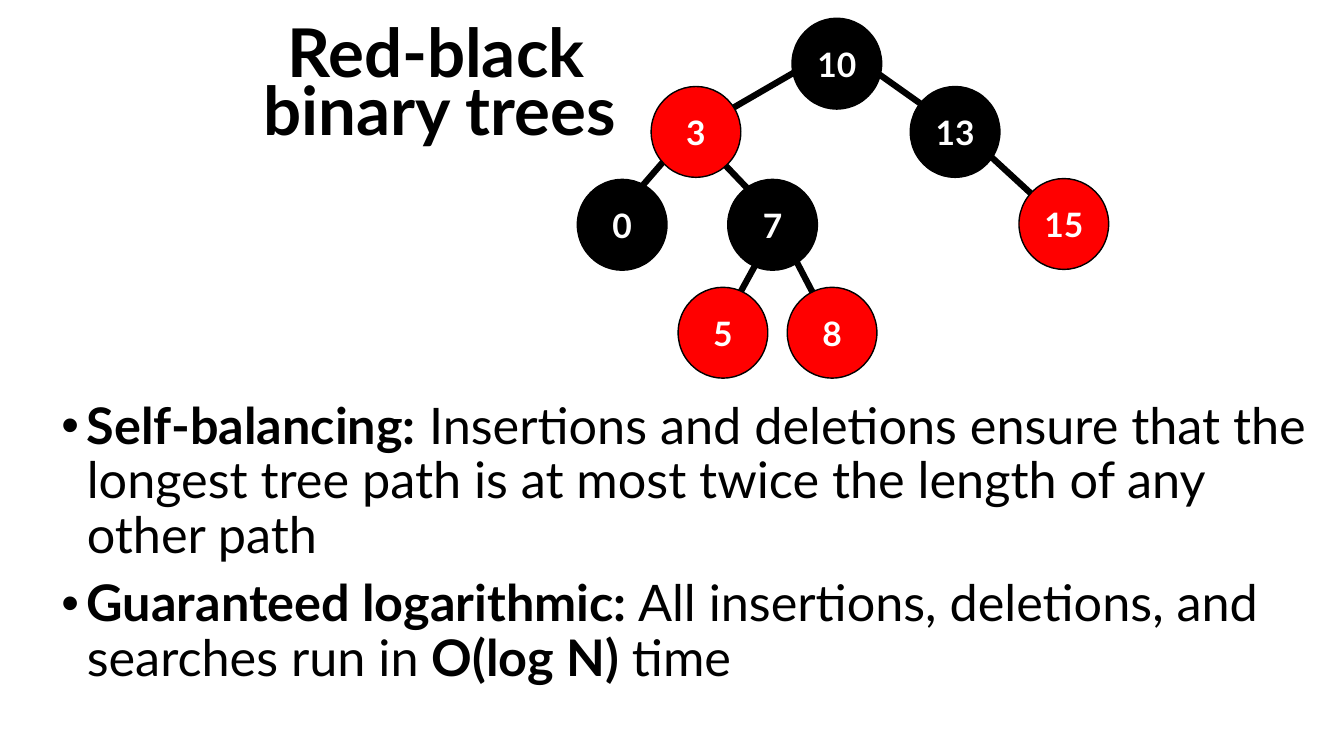
from lxml.etree import SubElement
from pptx import Presentation
from pptx.dml.color import RGBColor
from pptx.enum.shapes import MSO_CONNECTOR as Connector, MSO_SHAPE as Shape
from pptx.enum.text import MSO_ANCHOR as Anchor, PP_ALIGN as Align
from pptx.oxml.ns import qn
from pptx.util import Cm, Pt

COLORS = {"black": "000000", "red": "FF0000", "white": "FFFFFF"}
NODE_SIZE = (2.26, 2.29)

# Number, colour, left and top in cm
NODES = [
    ("10", "black", 19.96, 0.46),
    ("3", "red", 16.41, 2.18),
    ("13", "black", 22.94, 2.18),
    ("0", "black", 14.55, 4.52),
    ("7", "black", 18.34, 4.52),
    ("15", "red", 25.68, 4.5),
    ("5", "red", 17.09, 7.24),
    ("8", "red", 19.84, 7.24),
]

# Start and end of each branch in cm
BRANCHES = [
    (17.78, 3.12, 20.8, 1.37),
    (21.77, 1.6, 24, 3.18),
    (24.66, 3.66, 26.29, 5.16),
    (15.67, 5.28, 16.97, 3.78),
    (19.2, 5.13, 17.75, 3.61),
    (18.31, 8, 19.38, 6.05),
    (20.73, 7.85, 19.79, 6.05),
]

# Heading lines with their boxes in cm
HEADING = [
    ("Red-black", (6.3, 0.25, 9.37, 2.29)),
    ("binary trees", (5.56, 1.73, 11.05, 2.29)),
]

# Runs of each bullet: text and boldness
PROPERTIES = [
    [("Self-balancing:", True),
     (" Insertions and deletions ensure that the longest tree path "
      "is at most twice the length of any other path", False)],
    [("Guaranteed logarithmic:", True),
     (" All insertions, deletions, and searches run in ", False),
     ("O(log N)", True),
     (" time", False)],
]


def apply(target, values):
    for name, value in values.items():
        setattr(target, name, value)


class TreeSlide:
    font = "Lato"

    def __init__(self, slide):
        self.shapes = slide.shapes

    def color(self, name):
        return RGBColor.from_string(COLORS[name])

    def run(self, paragraph, text, size, bold=True, color="black"):
        run = paragraph.add_run()
        run.text = text
        apply(run.font, {"name": self.font, "size": Pt(size), "bold": bold})
        run.font.color.rgb = self.color(color)

    def branch(self, ends):
        branch = self.shapes.add_connector(Connector.STRAIGHT, *map(Cm, ends))
        branch.line.color.rgb = self.color("black")
        branch.line.width = Pt(4.5)
        SubElement(branch._element.spPr, qn("a:effectLst"))

    def node(self, number, color, left, top):
        node = self.shapes.add_shape(
            Shape.OVAL, *map(Cm, (left, top, *NODE_SIZE)))
        node.shadow.inherit = False
        node.fill.solid()
        node.fill.fore_color.rgb = self.color(color)
        node.line.color.rgb = self.color("black")
        node.line.width = Pt(1)
        apply(node.text_frame,
              {"word_wrap": False, "vertical_anchor": Anchor.MIDDLE})
        label = node.text_frame.paragraphs[0]
        label.alignment = Align.CENTER
        self.run(label, number, 24, color="white")

    def text_frame(self, box, anchor):
        frame = self.shapes.add_textbox(*map(Cm, box)).text_frame
        apply(frame, {"word_wrap": True, "vertical_anchor": anchor})
        return frame

    def heading(self, text, box):
        line = self.text_frame(box, Anchor.MIDDLE).paragraphs[0]
        apply(line, {"alignment": Align.CENTER, "line_spacing": 0.9})
        self.run(line, text, 48)

    def bullets(self, items, box):
        frame = self.text_frame(box, Anchor.TOP)
        for index, runs in enumerate(items):
            item = frame.add_paragraph() if index else frame.paragraphs[0]
            apply(item, {"line_spacing": 0.9, "space_before": Pt(10)})
            props = item._p.get_or_add_pPr()
            props.set("marL", str(Cm(0.64)))
            props.set("indent", str(-Cm(0.64)))
            SubElement(props, qn("a:buFont"), typeface="Arial")
            SubElement(props, qn("a:buChar"), char="•")
            for text, bold in runs:
                self.run(item, text, 36, bold)


def main():
    deck = Presentation()
    apply(deck, {"slide_width": Cm(33.87), "slide_height": Cm(19.05)})
    page = TreeSlide(deck.slides.add_slide(deck.slide_layouts[6]))

    # Heading
    for text, box in HEADING:
        page.heading(text, box)

    # Tree: branches lie behind the nodes
    for ends in BRANCHES:
        page.branch(ends)
    for node in NODES:
        page.node(*node)

    # Properties of the tree
    page.bullets(PROPERTIES, (1.3, 9.98, 32.11, 8.94))

    deck.save("out.pptx")


if __name__ == "__main__":
    main()
